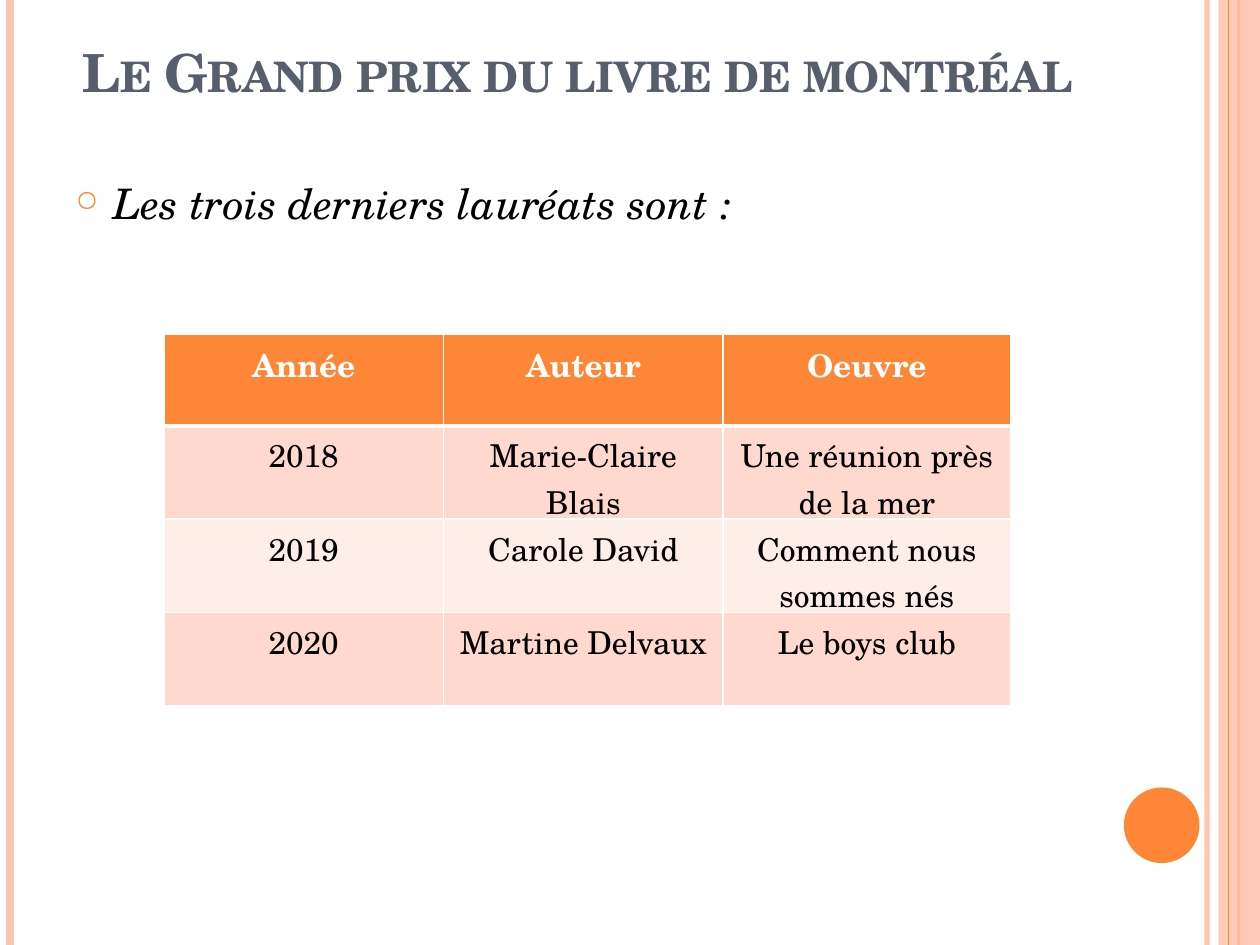
from lxml import etree
from pptx import Presentation
from pptx import util as u
from pptx.dml.color import RGBColor
from pptx.enum import shapes, text
from pptx.oxml.ns import qn

FONT = "TeX Gyre Schola"
ORANGE, PEACH, WHITE, BLACK, SLATE = "FE8637", "FEC3AE", "FFFFFF", "000000", "575F6D"
BANDS = ("FFD9CE", "FFEDE8")
COLS, ROWS = 100, 75


def rgb(value):
    return RGBColor.from_string(value)


def child(parent, tag, **attrs):
    return etree.SubElement(parent, qn(tag), attrs)


class Deck:
    """Holds the style and the current slide, measured on a 100 by 75 grid."""

    def __init__(self):
        self.prs = Presentation()
        self.prs.slide_width, self.prs.slide_height = u.Inches(10), u.Inches(7.5)
        self.s = self.prs.slides.add_slide(self.prs.slide_layouts[6])

    def x(self, cols):
        return round(self.prs.slide_width * cols / COLS)

    def y(self, rows):
        return round(self.prs.slide_height * rows / ROWS)

    def box(self, left, top, width, height):
        return self.x(left), self.y(top), self.x(width), self.y(height)

    def paint(self, fill, color, alpha=100):
        fill.solid()
        fill.fore_color.rgb = rgb(color)
        if alpha < 100:
            clr = fill._xPr.find(".//" + qn("a:srgbClr"))
            child(clr, "a:alpha", val=str(alpha * 1000))

    def rule(self, col, color, width, alpha=100):
        x = self.x(col)
        cn = self.s.shapes.add_connector(
            shapes.MSO_CONNECTOR.STRAIGHT, x, 0, x, self.y(ROWS))
        cn.line.width = u.Pt(width)
        self.paint(cn.line.fill, color, alpha)
        child(cn._element.spPr, "a:effectLst")

    def shape(self, kind, at, color, alpha=100):
        sp = self.s.shapes.add_shape(kind, *self.box(*at))
        sp.shadow.inherit = False
        sp.line.fill.background()
        self.paint(sp.fill, color, alpha)

    def style(self, p, size, color, bold=False, italic=False):
        f = p.font
        f.name, f.size, f.bold, f.italic = FONT, u.Pt(size), bold, italic
        f.color.rgb = rgb(color)

    def text(self, at, words, size, color, spacing, inset=0.05, **look):
        tf = self.s.shapes.add_textbox(*self.box(*at)).text_frame
        tf.word_wrap = True
        tf.margin_top = u.Inches(inset)
        p = tf.paragraphs[0]
        p.text, p.line_spacing = words, u.Pt(spacing)
        self.style(p, size, color, **look)
        return p

    def title(self, at, words):
        p = self.text(at, words, 30, SLATE, 36, inset=0.02, bold=True)
        p.alignment = text.PP_ALIGN.CENTER
        p.font._rPr.set("cap", "small")

    def bullet(self, at, words):
        p = self.text(at, words, 24, BLACK, 32.5, italic=True)
        pPr = p._p.get_or_add_pPr()
        indent = u.Inches(0.3)
        pPr.set("marL", str(indent))
        pPr.set("indent", str(-indent))
        marks = [etree.Element(qn(tag)) for tag in ("a:buClr", "a:buSzPct", "a:buChar")]
        child(marks[0], "a:srgbClr", val=ORANGE)
        marks[1].set("val", "70000")
        marks[2].set("char", "○")
        for mark in marks:
            pPr.find(qn("a:defRPr")).addprevious(mark)

    def borders(self, cell, header):
        tcPr = cell._tc.get_or_add_tcPr()
        for i, side in enumerate(("a:lnL", "a:lnR", "a:lnT", "a:lnB")):
            width = 3 if header and side == "a:lnB" else 1
            ln = etree.Element(qn(side), w=str(u.Pt(width)))
            child(child(ln, "a:solidFill"), "a:srgbClr", val=WHITE)
            tcPr.insert(i, ln)

    def table(self, at, widths, heights, data):
        t = self.s.shapes.add_table(len(data), len(widths), *self.box(*at)).table
        for column, width in zip(t.columns, widths):
            column.width = self.x(width)
        for i, (row, height, values) in enumerate(zip(t.rows, heights, data)):
            row.height = self.y(height)
            header = i == 0
            for cell, value in zip(row.cells, values):
                self.paint(cell.fill, ORANGE if header else BANDS[(i - 1) % 2])
                self.borders(cell, header)
                p = cell.text_frame.paragraphs[0]
                p.text, p.alignment = value, text.PP_ALIGN.CENTER
                self.style(p, 18, WHITE if header else BLACK, bold=header)


def main():
    d = Deck()
    kinds = shapes.MSO_SHAPE
    d.rule(95.8, PEACH, 3, 93)
    d.rule(0.8, PEACH, 4.5)
    d.rule(98.3, ORANGE, 1.5)
    d.shape(kinds.RECTANGLE, (96.7, 0, 3.3, ROWS), PEACH, 87)
    d.rule(97.5, ORANGE, 0.75)
    d.shape(kinds.OVAL, (89.2, 62.5, 6, 6), ORANGE)
    d.title((5, 3, 81.7, 10.1), "Le Grand prix du livre de montréal")
    d.bullet((5, 13.1, 81.7, 57.7), "Les trois derniers lauréats sont :")
    d.table((13, 26.5, 67.2, 29.5), (22.2, 22.2, 22.8), (7.3, 7.4, 7.4, 7.4), [
        ("Année", "Auteur", "Oeuvre"),
        ("2018", "Marie-Claire Blais", "Une réunion près de la mer"),
        ("2019", "Carole David", "Comment nous sommes nés"),
        ("2020", "Martine Delvaux", "Le boys club"),
    ])
    d.prs.save("out.pptx")


if __name__ == "__main__":
    main()
